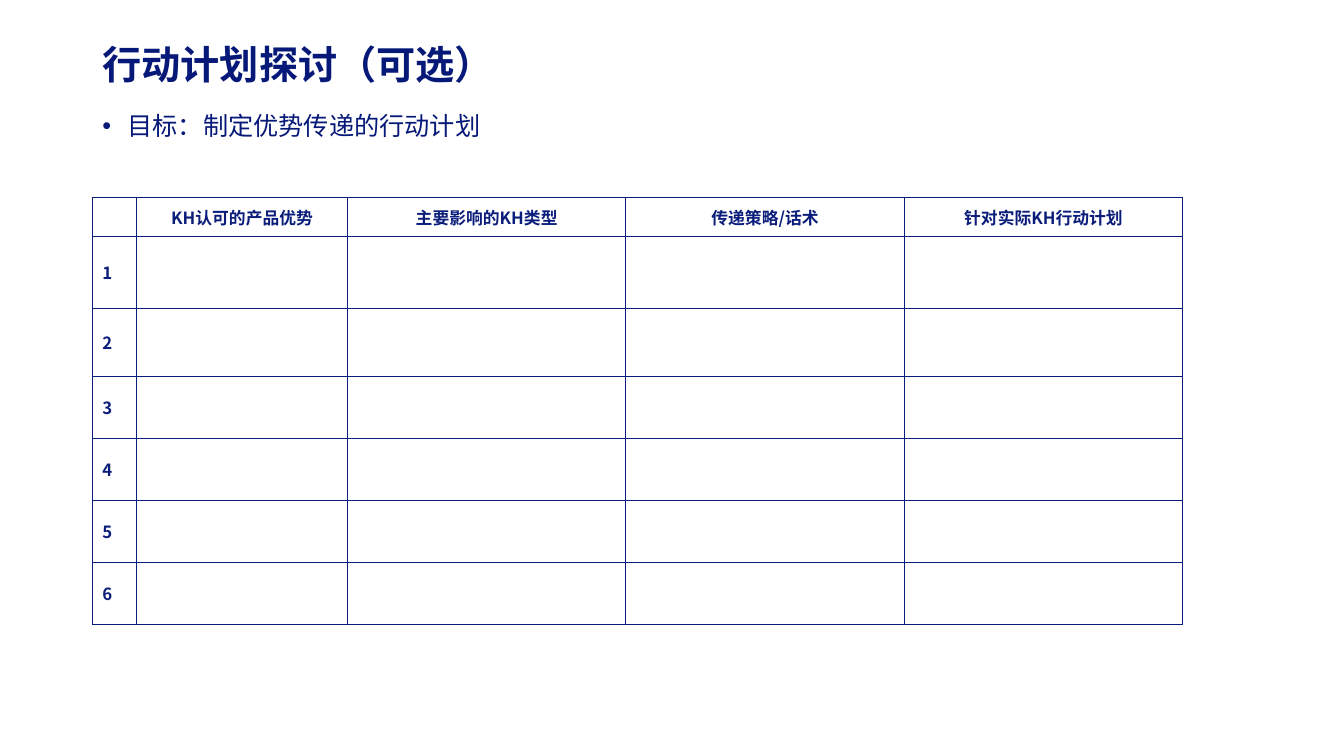
from lxml.etree import SubElement
from pptx import Presentation
from pptx.dml.color import RGBColor
from pptx.enum.text import MSO_ANCHOR as Anchor, MSO_AUTO_SIZE as AutoSize, PP_ALIGN as Align
from pptx.oxml.ns import qn
from pptx.util import Pt

FONT = "Noto Sans CJK SC"
TEXT_COLOR = "071978"
TABLE_COLOR = "0B1D7A"
HEADERS = ["", "KH认可的产品优势", "主要影响的KH类型", "传递策略/话术", "针对实际KH行动计划"]
COLUMN_WIDTHS = [31.7, 150.5, 198.9, 198.9, 198.9]
ROW_HEIGHTS = [28, 51.4, 48.7] + [44.3] * 4


def color(value):
    return RGBColor.from_string(value)


def add_span(para, text, size, tint, bold=False):
    span = para.add_run()
    span.text = text
    span.font.name = FONT
    span.font.size = Pt(size)
    span.font.bold = bold
    span.font.color.rgb = color(tint)
    SubElement(span.font._element, qn("a:ea"), typeface=FONT)


def prepare_frame(frame):
    frame.word_wrap = True
    frame.auto_size = AutoSize.NONE
    frame.vertical_anchor = Anchor.TOP
    para = frame.paragraphs[0]
    para.alignment = Align.LEFT
    para.line_spacing = 0.9
    para.space_before = Pt(0)
    return para


def add_title(page, left, top, width, height):
    box = page.shapes.title
    box.left, box.top, box.width, box.height = Pt(left), Pt(top), Pt(width), Pt(height)
    add_span(prepare_frame(box.text_frame), "行动计划探讨（可选）", 28, TEXT_COLOR, True)


def add_goal(page, left, top, width, height):
    box = page.shapes.add_textbox(Pt(left), Pt(top), Pt(width), Pt(height))
    para = prepare_frame(box.text_frame)
    properties = para._p.get_or_add_pPr()
    properties.set("marL", str(Pt(18)))
    properties.set("indent", str(Pt(-18)))
    SubElement(properties, qn("a:buFont"), typeface="Arial")
    SubElement(properties, qn("a:buChar"), char="•")
    add_span(para, "目标：制定优势传递的行动计划", 18, TEXT_COLOR)


def add_borders(cell):
    properties = cell._tc.get_or_add_tcPr()
    for side in ("lnL", "lnR", "lnT", "lnB"):
        line = SubElement(properties, qn(f"a:{side}"), w=str(Pt(1)))
        fill = SubElement(line, qn("a:solidFill"))
        SubElement(fill, qn("a:srgbClr"), val=TABLE_COLOR)


def fill_cell(cell, text, alignment):
    add_borders(cell)
    cell.fill.background()
    cell.vertical_anchor = Anchor.MIDDLE
    para = cell.text_frame.paragraphs[0]
    para.alignment = alignment
    if text:
        add_span(para, text, 12, TABLE_COLOR, True)
    else:
        SubElement(para._p, qn("a:endParaRPr"), sz="1200")


def add_plan_table(page, left, top):
    frame = page.shapes.add_table(
        len(ROW_HEIGHTS), len(COLUMN_WIDTHS), Pt(left), Pt(top),
        Pt(sum(COLUMN_WIDTHS)), Pt(sum(ROW_HEIGHTS)))
    table = frame.table
    table.first_row = False
    table.horz_banding = False
    for column, width in zip(table.columns, COLUMN_WIDTHS):
        column.width = Pt(width)
    for index, (row, height) in enumerate(zip(table.rows, ROW_HEIGHTS)):
        row.height = Pt(height)
        texts = [str(index)] + [""] * (len(HEADERS) - 1) if index else HEADERS
        for cell, text in zip(row.cells, texts):
            fill_cell(cell, text, Align.LEFT if index else Align.CENTER)


def main():
    deck = Presentation()
    deck.slide_width, deck.slide_height = Pt(960), Pt(540)
    page = deck.slides.add_slide(deck.slide_layouts[5])
    add_title(page, 66, 28.8, 828, 63.4)
    add_goal(page, 66, 77.8, 828, 50.4)
    add_plan_table(page, 66, 141)
    deck.save("out.pptx")


if __name__ == "__main__":
    main()
